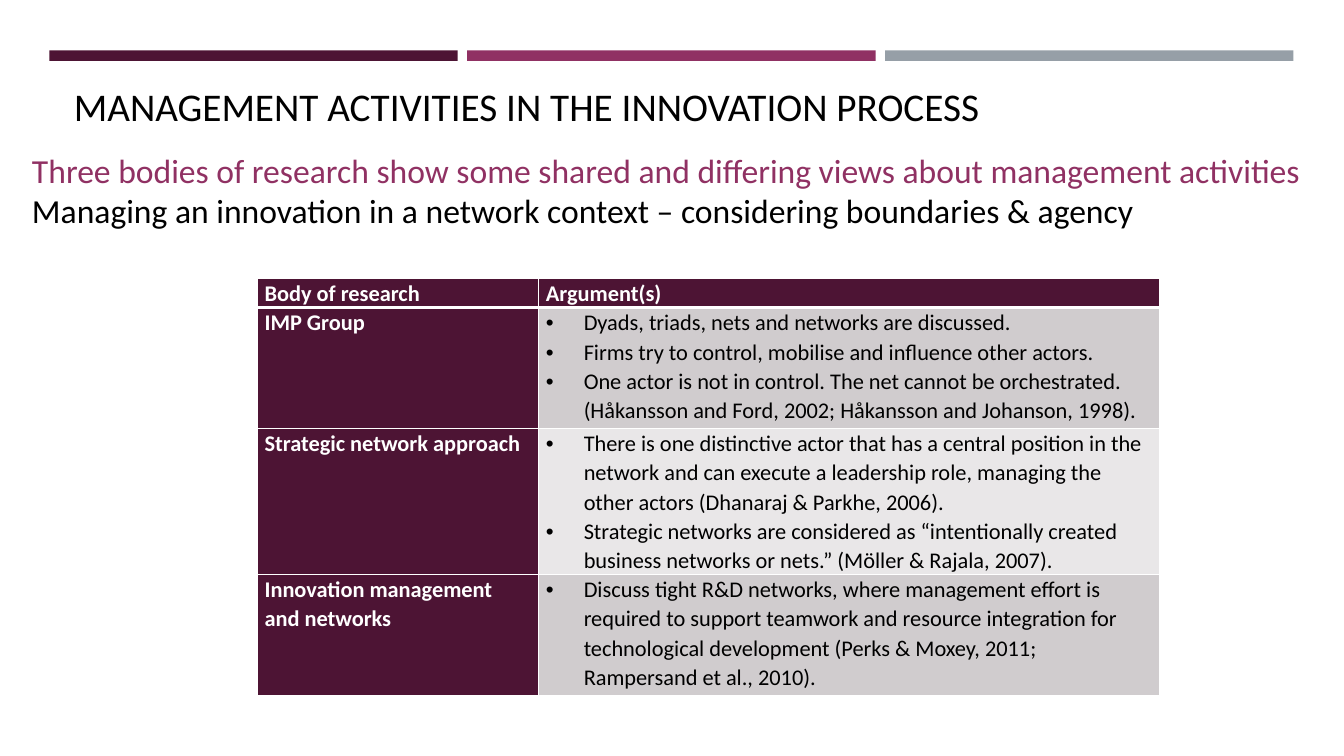
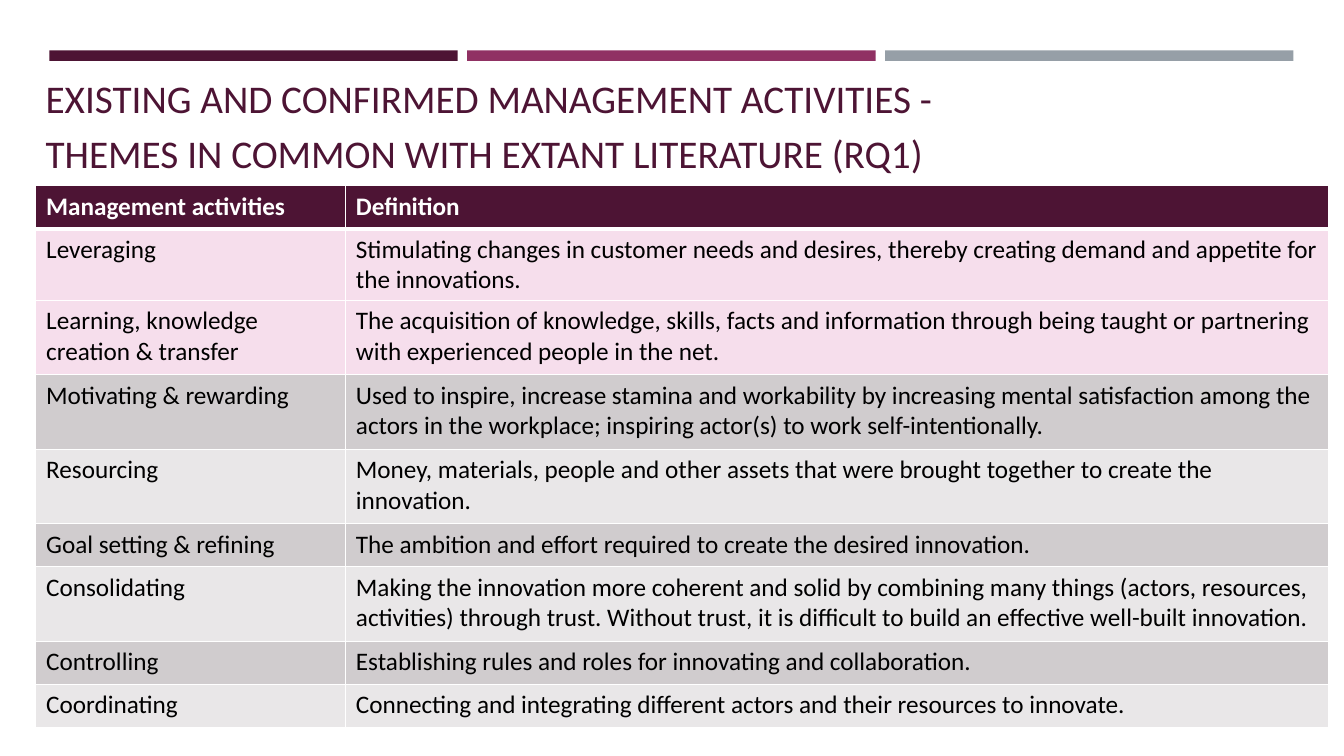
import dataclasses
import typing

import lxml.etree
import pptx
import pptx.dml.color
import pptx.enum.shapes
import pptx.oxml.ns
import pptx.util

SCALE = 9525


@dataclasses.dataclass(frozen=True)
class Theme:
    font: str = "Calibri"
    plum: str = "4D1434"
    berry: str = "903163"
    slate: str = "969FA7"
    black: str = "000000"
    white: str = "FFFFFF"
    dark: str = "D0CCCE"
    light: str = "E9E7E8"
    pink: str = "F6DEEC"
    title: int = 28
    lead: int = 24
    large: int = 18
    small: int = 16


THEME = Theme()


class Box(typing.NamedTuple):
    left: int
    top: int
    width: int
    height: int


class Row(typing.NamedTuple):
    height: int
    label: str
    body: str
    fill: str


@dataclasses.dataclass(frozen=True)
class Grid:
    left: int
    top: int
    cols: tuple[int, int]
    rows: list[Row]
    size: int
    side: int
    edge: int
    line: float = 1.0
    strong: bool = False
    bullet: bool = False


def px(count: int) -> pptx.util.Emu:
    return pptx.util.Emu(count * SCALE)


def tint(code: str) -> pptx.dml.color.RGBColor:
    return pptx.dml.color.RGBColor.from_string(code)


def add_tag(parent, name: str, **values: str):
    return lxml.etree.SubElement(parent, pptx.oxml.ns.qn(name), values)


def write(frame, text: str, *, size: int, color: str, bold: bool = False,
          line: float = 1.0, after: int = 0, bullet: bool = False,
          fresh: bool = True) -> None:
    for index, part in enumerate(text.split("\n")):
        first = fresh and index == 0
        para = frame.paragraphs[0] if first else frame.add_paragraph()
        para.line_spacing = line
        para.space_after = pptx.util.Pt(after)
        run = para.add_run()
        run.text = part
        run.font.name = THEME.font
        run.font.size = pptx.util.Pt(size)
        run.font.bold = bold
        run.font.color.rgb = tint(color)
        if bullet:
            props = para._p.get_or_add_pPr()
            props.set("marL", str(px(36)))
            props.set("indent", str(-px(36)))
            add_tag(props, "a:buFont", typeface="Arial")
            add_tag(props, "a:buChar", char="•")


def add_frame(slide, box: Box):
    frame = slide.shapes.add_textbox(*map(px, box)).text_frame
    frame.word_wrap = True
    return frame


def add_bars(slide) -> None:
    for index, color in enumerate((THEME.plum, THEME.berry, THEME.slate)):
        box = Box(47 + 398 * index, 48, 389, 10)
        bar = slide.shapes.add_shape(
            pptx.enum.shapes.MSO_SHAPE.RECTANGLE, *map(px, box))
        bar.shadow.inherit = False
        bar.fill.solid()
        bar.fill.fore_color.rgb = tint(color)
        bar.line.fill.background()


def add_slide(deck, title: str, box: Box, color: str):
    slide = deck.slides.add_slide(deck.slide_layouts[6])
    add_bars(slide)
    write(add_frame(slide, box), title, size=THEME.title, color=color, after=6)
    return slide


def paint(cell, fill: str, top: int, base: int) -> None:
    props = cell._tc.get_or_add_tcPr()
    for side, width in (("L", 1), ("R", 1), ("T", top), ("B", base)):
        edge = add_tag(props, f"a:ln{side}", w=str(pptx.util.Pt(width)))
        solid = add_tag(edge, "a:solidFill")
        add_tag(solid, "a:srgbClr", val=THEME.white)
    cell.fill.solid()
    cell.fill.fore_color.rgb = tint(fill)


def add_grid(slide, grid: Grid) -> None:
    box = Box(grid.left, grid.top, sum(grid.cols),
              sum(row.height for row in grid.rows))
    table = slide.shapes.add_table(
        len(grid.rows), len(grid.cols), *map(px, box)).table
    for col, width in zip(table.columns, grid.cols):
        col.width = px(width)
    for y, row in enumerate(grid.rows):
        table.rows[y].height = px(row.height)
        for x, text in enumerate((row.label, row.body)):
            head = y == 0 or (grid.strong and x == 0)
            cell = table.cell(y, x)
            cell.margin_left = cell.margin_right = px(grid.side)
            cell.margin_top = cell.margin_bottom = px(grid.edge)
            paint(cell, THEME.plum if head else row.fill,
                  3 if y == 1 else 1, 3 if y == 0 else 1)
            write(cell.text_frame, text, size=grid.size, bold=head,
                  color=THEME.white if head else THEME.black,
                  line=grid.line, bullet=grid.bullet and not head)


BODIES = Grid(
    left=245, top=265, cols=(268, 591), size=THEME.small, side=7, edge=0,
    line=1.07, strong=True, bullet=True,
    rows=[
        Row(28, "Body of research", "Argument(s)", THEME.plum),
        Row(115, "IMP Group",
            "Dyads, triads, nets and networks are discussed.\n"
            "Firms try to control, mobilise and influence other actors.\n"
            "One actor is not in control. The net cannot be orchestrated. "
            "(Håkansson and Ford, 2002; Håkansson and Johanson, 1998).",
            THEME.dark),
        Row(139, "Strategic network approach",
            "There is one distinctive actor that has a central position in "
            "the network and can execute a leadership role, managing the "
            "other actors (Dhanaraj & Parkhe, 2006).\n"
            "Strategic networks are considered as “intentionally created "
            "business networks or nets.” (Möller & Rajala, 2007).",
            THEME.light),
        Row(116, "Innovation management and networks",
            "Discuss tight R&D networks, where management effort is required "
            "to support teamwork and resource integration for technological "
            "development (Perks & Moxey, 2011; Rampersand et al., 2010).",
            THEME.dark),
    ])

THEMES = Grid(
    left=34, top=177, cols=(295, 936), size=THEME.large, side=10, edge=5,
    rows=[
        Row(41, "Management activities", "Definition", THEME.plum),
        Row(68, "Leveraging",
            "Stimulating changes in customer needs and desires, thereby "
            "creating demand and appetite for the innovations.", THEME.pink),
        Row(71, "Learning, knowledge creation & transfer",
            "The acquisition of knowledge, skills, facts and information "
            "through being taught or partnering with experienced people in "
            "the net.", THEME.pink),
        Row(71, "Motivating & rewarding",
            "Used to inspire, increase stamina and workability by increasing "
            "mental satisfaction among the actors in the workplace; "
            "inspiring actor(s) to work self-intentionally.", THEME.dark),
        Row(71, "Resourcing",
            "Money, materials, people and other assets that were brought "
            "together to create the innovation.", THEME.light),
        Row(41, "Goal setting & refining",
            "The ambition and effort required to create the desired "
            "innovation.", THEME.dark),
        Row(71, "Consolidating",
            "Making the innovation more coherent and solid by combining many "
            "things (actors, resources, activities) through trust. Without "
            "trust, it is difficult to build an effective well-built "
            "innovation.", THEME.light),
        Row(41, "Controlling",
            "Establishing rules and roles for innovating and collaboration.",
            THEME.dark),
        Row(41, "Coordinating",
            "Connecting and integrating different actors and their resources "
            "to innovate.", THEME.light),
    ])


def main() -> None:
    deck = pptx.Presentation()
    deck.slide_width, deck.slide_height = px(1280), px(720)

    slide = add_slide(deck, "MANAGEMENT ACTIVITIES IN THE INNOVATION PROCESS",
                      Box(61, 74, 1182, 60), THEME.black)
    lead = add_frame(slide, Box(21, 138, 1259, 87))
    write(lead, "Three bodies of research show some shared and differing "
          "views about management activities",
          size=THEME.lead, color=THEME.berry)
    write(lead, "Managing an innovation in a network context – considering "
          "boundaries & agency",
          size=THEME.lead, color=THEME.black, fresh=False)
    add_grid(slide, BODIES)

    slide = add_slide(deck, "EXISTING AND CONFIRMED MANAGEMENT ACTIVITIES -\n"
                      "THEMES IN COMMON WITH EXTANT LITERATURE (RQ1)",
                      Box(34, 66, 1154, 110), THEME.plum)
    add_grid(slide, THEMES)
    deck.save("out.pptx")


if __name__ == "__main__":
    main()
